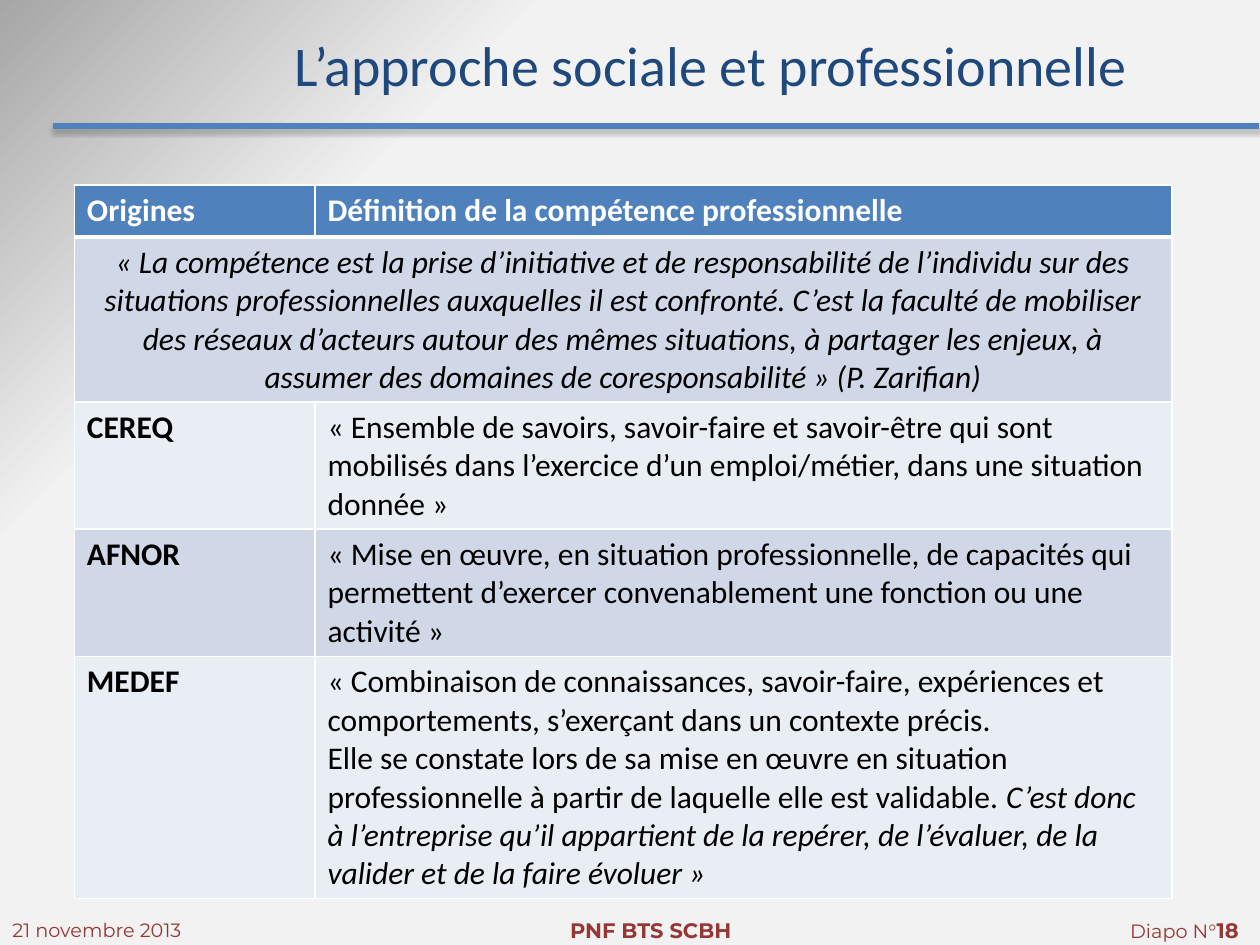
from lxml import etree
from pptx import Presentation
from pptx.dml.color import RGBColor
from pptx.enum.shapes import MSO_CONNECTOR
from pptx.enum.text import MSO_ANCHOR, MSO_AUTO_SIZE, PP_ALIGN
from pptx.oxml.ns import qn
from pptx.util import Inches, Pt

LEFT, CENTER = PP_ALIGN.LEFT, PP_ALIGN.CENTER
MIDDLE = MSO_ANCHOR.MIDDLE
GROW = MSO_AUTO_SIZE.SHAPE_TO_FIT_TEXT
STRAIGHT = MSO_CONNECTOR.STRAIGHT

BLUE = RGBColor(0x4F, 0x81, 0xBD)
NAVY = RGBColor(0x1F, 0x49, 0x7D)
MAROON = RGBColor(0x95, 0x37, 0x35)
BAND_DARK = RGBColor(0xD0, 0xD8, 0xE8)
BAND_LIGHT = RGBColor(0xE9, 0xED, 0xF4)
PALE_GREY = RGBColor(0xF2, 0xF2, 0xF2)
MID_GREY = RGBColor(0xA6, 0xA6, 0xA6)
WHITE = RGBColor(0xFF, 0xFF, 0xFF)
BLACK = RGBColor(0, 0, 0)

BODY_FONT, FOOTER_FONT = "Calibri", "Montserrat"
PLAIN, BOLD, ITALIC = (False, False), (True, False), (False, True)
BREAK = "\n"

TITLE = "L’approche sociale et professionnelle"
FOOTERS = [
    ((0, 7.24, 2.01, 0.29), LEFT, [("21 novembre 2013", 11, PLAIN)]),
    ((4.25, 7.23, 1.83, 0.3), CENTER, [("PNF BTS SCBH", 12, BOLD)]),
    ((8.87, 7.23, 1.25, 0.3), LEFT, [("Diapo N°", 11, PLAIN), ("18", 12, BOLD)]),
]
COLUMN_WIDTHS = [1.91, 6.8]
ROWS = [
    (0.41, [[("Origines", BOLD)],
            [("Définition de la compétence professionnelle", BOLD)]]),
    (1.31, [[("« La compétence est la prise d’initiative et de responsabilité de "
              "l’individu sur des situations professionnelles auxquelles il est "
              "confronté. C’est la faculté de mobiliser des réseaux d’acteurs autour "
              "des mêmes situations, à partager les enjeux, à assumer des domaines "
              "de coresponsabilité » (P. Zarifian)", ITALIC)]]),
    (1.01, [[("CEREQ", BOLD)],
            [("« Ensemble de savoirs, savoir-faire et savoir-être qui sont mobilisés "
              "dans l’exercice d’un emploi/métier, dans une situation donnée »", PLAIN)]]),
    (1.01, [[("AFNOR", BOLD)],
            [("« Mise en œuvre, en situation professionnelle, de capacités qui "
              "permettent d’exercer convenablement une fonction ou une activité »",
              PLAIN)]]),
    (1.92, [[("MEDEF", BOLD)],
            [("« Combinaison de connaissances, savoir-faire, expériences et "
              "comportements, s’exerçant dans un contexte précis.", PLAIN),
             (BREAK, PLAIN),
             ("Elle se constate lors de sa mise en œuvre en situation professionnelle "
              "à partir de laquelle elle est validable. ", PLAIN),
             ("C’est donc à l’entreprise qu’il appartient de la repérer, de "
              "l’évaluer, de la valider et de la faire évoluer »", ITALIC)]]),
]


def add_span(para, text, size, font, color, style=PLAIN):
    if text == BREAK:
        para.add_line_break()
        return
    span = para.add_run()
    span.text = text
    span.font.name = font
    span.font.size = Pt(size)
    span.font.color.rgb = color
    span.font.bold, span.font.italic = style


def add_child(parent, tag, **attributes):
    return etree.SubElement(parent, qn(tag), attributes)


def paint_background(slide):
    fill = slide.background.fill
    fill.gradient()
    stops = [(0.75, PALE_GREY), (1, MID_GREY)]
    for stop, (position, color) in zip(fill.gradient_stops, stops):
        stop.position = position
        stop.color.rgb = color
    gradient = slide.element.find(".//" + qn("a:gradFill"))
    gradient.remove(gradient.find(qn("a:lin")))
    circle = add_child(gradient, "a:path", path="circle")
    add_child(circle, "a:fillToRect", l="100000", t="100000")


def add_rule(slide):
    rule = slide.shapes.add_connector(
        STRAIGHT, Inches(0.42), Inches(1), Inches(9.99), Inches(1))
    rule.line.color.rgb = BLUE
    rule.line.width = Pt(3)
    effects = add_child(rule.element.spPr, "a:effectLst")
    shadow = add_child(effects, "a:outerShdw", blurRad=str(Pt(3.1)),
                       dist=str(Pt(1.8)), dir="5400000", rotWithShape="0")
    shade = add_child(shadow, "a:srgbClr", val=str(BLACK))
    add_child(shade, "a:alpha", val="35000")


def add_footer(slide, place, align, spans):
    box = slide.shapes.add_textbox(*map(Inches, place))
    box.text_frame.word_wrap = True
    box.text_frame.auto_size = GROW
    para = box.text_frame.paragraphs[0]
    para.alignment = align
    for text, size, style in spans:
        add_span(para, text, size, FOOTER_FONT, MAROON, style)


def set_borders(cell, top, bottom):
    properties = cell._tc.get_or_add_tcPr()
    widths = {"a:lnL": 1, "a:lnR": 1, "a:lnT": top, "a:lnB": bottom}
    for index, (tag, width) in enumerate(widths.items()):
        border = etree.Element(qn(tag), w=str(Pt(width)))
        add_child(add_child(border, "a:solidFill"), "a:srgbClr", val=str(WHITE))
        properties.insert(index, border)


def add_definitions(slide):
    height = sum(row_height for row_height, _ in ROWS)
    table = slide.shapes.add_table(
        len(ROWS), len(COLUMN_WIDTHS), Inches(0.59), Inches(1.47),
        Inches(sum(COLUMN_WIDTHS)), Inches(height)).table
    for column, width in zip(table.columns, COLUMN_WIDTHS):
        column.width = Inches(width)
    for number, (row_height, contents) in enumerate(ROWS):
        table.rows[number].height = Inches(row_height)
        header, merged = number == 0, len(contents) == 1
        band = BLUE if header else BAND_DARK if number % 2 else BAND_LIGHT
        cells = list(table.rows[number].cells)
        for cell in cells:
            cell.fill.solid()
            cell.fill.fore_color.rgb = band
            set_borders(cell, 3 if number == 1 else 1, 3 if header else 1)
        if merged:
            cells[0].merge(cells[-1])
        for cell, spans in zip(cells, contents):
            para = cell.text_frame.paragraphs[0]
            para.alignment = CENTER if merged else LEFT
            for text, style in spans:
                add_span(para, text, 18, BODY_FONT, WHITE if header else BLACK, style)


def add_title(slide):
    title = slide.shapes.title
    title.left, title.top, title.width, title.height = map(Inches, (1.29, 0, 8.71, 1.01))
    title.text_frame.vertical_anchor = MIDDLE
    para = title.text_frame.paragraphs[0]
    para.alignment = CENTER
    add_span(para, TITLE, 32, BODY_FONT, NAVY)


def main():
    deck = Presentation()
    deck.slide_width, deck.slide_height = Inches(10), Inches(7.5)
    slide = deck.slides.add_slide(deck.slide_layouts[5])
    paint_background(slide)
    add_rule(slide)
    for footer in FOOTERS:
        add_footer(slide, *footer)
    add_title(slide)
    add_definitions(slide)
    deck.save("out.pptx")


if __name__ == "__main__":
    main()
